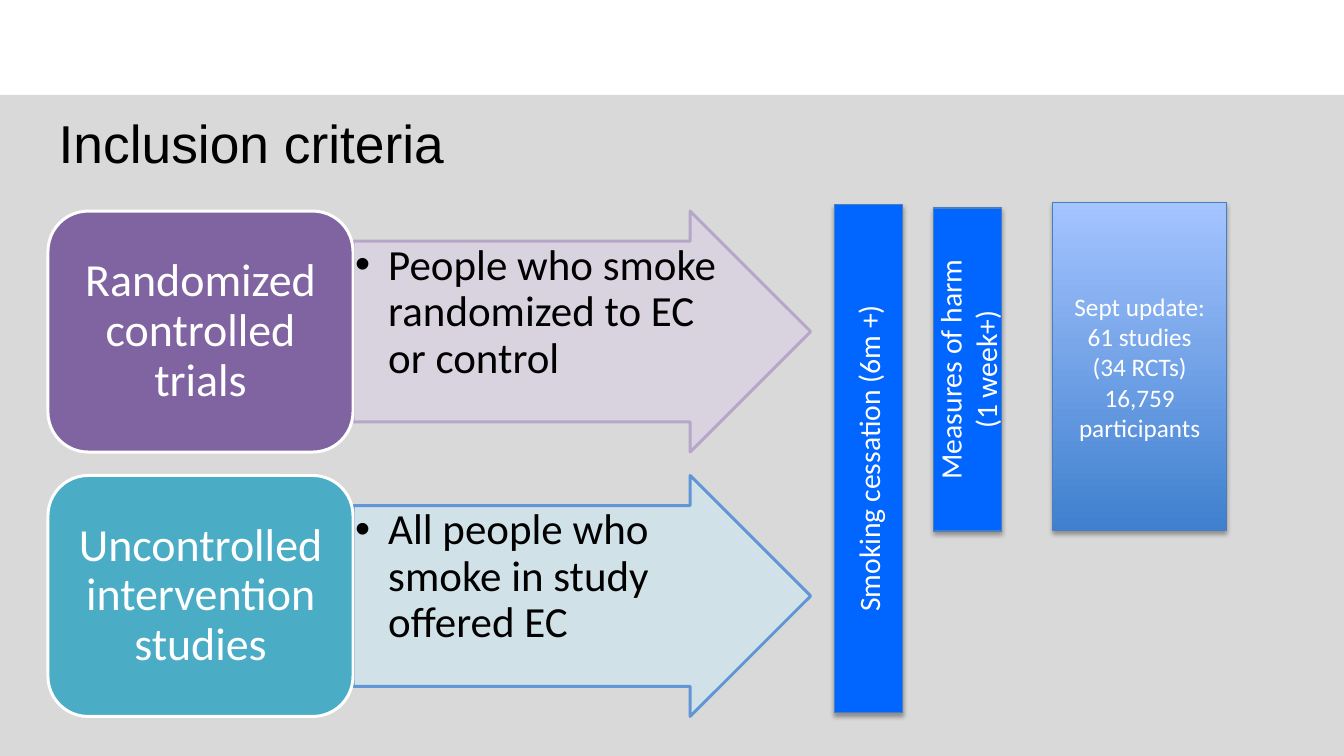
"""Build the "Inclusion criteria" slide: study types, outcomes and update figures."""
from lxml.etree import SubElement
from pptx import Presentation
from pptx.dml.color import RGBColor as RGB
from pptx.enum.shapes import MSO_SHAPE as SHAPE
from pptx.enum.text import MSO_ANCHOR as ANCHOR, PP_ALIGN as ALIGN
from pptx.oxml.ns import qn
from pptx.util import Inches as In, Pt

COLORS = {
    "panel": "D9D9D9", "black": "000000", "white": "FFFFFF",
    "blue": "0066FF", "edge": "4B7EBC", "deep": "3F80CE", "pale": "A4C4FF",
    "purple": "8064A2", "lilac": "D8D3E0", "lilac_edge": "B3A2C7",
    "teal": "4BACC6", "mist": "D0E3EA", "mist_edge": "558ED5",
}
SLIDE_W, SLIDE_H = 12.6, 7.09
LEFT, TOP = 0.45, 1.98
LABEL_W, ARROW_W = 2.86, 4.29
ROW_H, ROW_STEP = 2.26, 2.48
BAR_W = 0.64


def add_box(kind, x, y, w, h, fill, line=None, width=0.75, shadow=False):
    sp = s.shapes.add_shape(kind, In(x), In(y), In(w), In(h))
    sp.fill.solid()
    sp.fill.fore_color.rgb = RGB.from_string(COLORS[fill])
    if line:
        sp.line.color.rgb = RGB.from_string(COLORS[line])
        sp.line.width = Pt(width)
    else:
        sp.line.fill.background()
    sp.shadow.inherit = False
    if shadow:
        effects = sp._element.spPr.find(qn("a:effectLst"))
        outer = SubElement(effects, qn("a:outerShdw"), blurRad=str(Pt(3.1)),
                           dist=str(Pt(1.8)), dir="5400000", rotWithShape="0")
        color = SubElement(outer, qn("a:srgbClr"), val=COLORS["black"])
        SubElement(color, qn("a:alpha"), val="35000")
    return sp


def write(sp, text, size, color="white", align=ALIGN.CENTER, anchor=ANCHOR.MIDDLE,
          spacing=1.0, insets=(0.1, 0.05), bullet=False):
    tf = sp.text_frame
    tf.word_wrap = True
    tf.vertical_anchor = anchor
    tf.margin_left = tf.margin_right = In(insets[0])
    tf.margin_top = tf.margin_bottom = In(insets[1])
    tf.text = text
    for p in tf.paragraphs:
        p.alignment = align
        p.line_spacing = spacing
        if bullet:
            pPr = p._p.get_or_add_pPr()
            pPr.set("marL", str(In(0.31)))
            pPr.set("indent", str(-In(0.31)))
            SubElement(pPr, qn("a:buFont"), typeface="Arial")
            SubElement(pPr, qn("a:buChar"), char="•")
        for r in p.runs:
            r.font.name = "Calibri"
            r.font.size = Pt(size)
            r.font.color.rgb = RGB.from_string(COLORS[color])


prs = Presentation()
prs.slide_width, prs.slide_height = In(SLIDE_W), In(SLIDE_H)
s = prs.slides.add_slide(prs.slide_layouts[5])

title = s.shapes.title
title.left, title.top, title.width, title.height = In(LEFT), In(1.01), In(8.3), In(0.65)
write(title, "Inclusion criteria", 36, "black", ALIGN.LEFT)
title.text_frame.paragraphs[0].runs[0].font.name = "Arial"

panel = add_box(SHAPE.RECTANGLE, 0, 0.89, SLIDE_W, SLIDE_H - 0.89, "panel")
title._element.addprevious(panel._element)

bars = [
    ("Smoking cessation (6m +)", 7.82, 1.92, 4.76),
    ("Measures of harm\n(1 week+)", 8.75, 1.95, 3.03),
]
for text, x, y, length in bars:
    shift = (length - BAR_W) / 2
    bar = add_box(SHAPE.RECTANGLE, x - shift, y + shift, length, BAR_W,
                  "blue", "edge", shadow=True)
    bar.rotation = 270
    write(bar, text, 20)

update = add_box(SHAPE.RECTANGLE, 9.87, 1.9, 1.63, 3.08, "deep", "edge", shadow=True)
update.fill.gradient()
update.fill.gradient_angle = 90
for stop, name in zip(update.fill.gradient_stops, ("deep", "pale")):
    stop.color.rgb = RGB.from_string(COLORS[name])
write(update, "Sept update:\n61 studies\n(34 RCTs)\n16,759 participants", 17)

studies = [
    ("Randomized controlled trials", "purple",
     "People who smoke randomized to EC or control", "lilac", "lilac_edge"),
    ("Uncontrolled intervention studies", "teal",
     "All people who smoke in study offered EC", "mist", "mist_edge"),
]
for row, (label, label_fill, people, arrow_fill, arrow_edge) in enumerate(studies):
    y = TOP + row * ROW_STEP
    arrow = add_box(SHAPE.RIGHT_ARROW, LEFT + LABEL_W, y, ARROW_W, ROW_H,
                    arrow_fill, arrow_edge, 2)
    arrow.adjustments[0], arrow.adjustments[1] = 0.75, 0.5
    for color in arrow._element.spPr.iter(qn("a:srgbClr")):
        SubElement(color, qn("a:alpha"), val="90000")
    write(arrow, people, 29, "black", ALIGN.LEFT, ANCHOR.TOP, 0.9, (0.02, 0.02), True)
    box = add_box(SHAPE.ROUNDED_RECTANGLE, LEFT, y, LABEL_W, ROW_H, label_fill, "white", 2)
    write(box, label, 31, spacing=0.9, insets=(0.13, 0.06))

prs.save("out.pptx")
